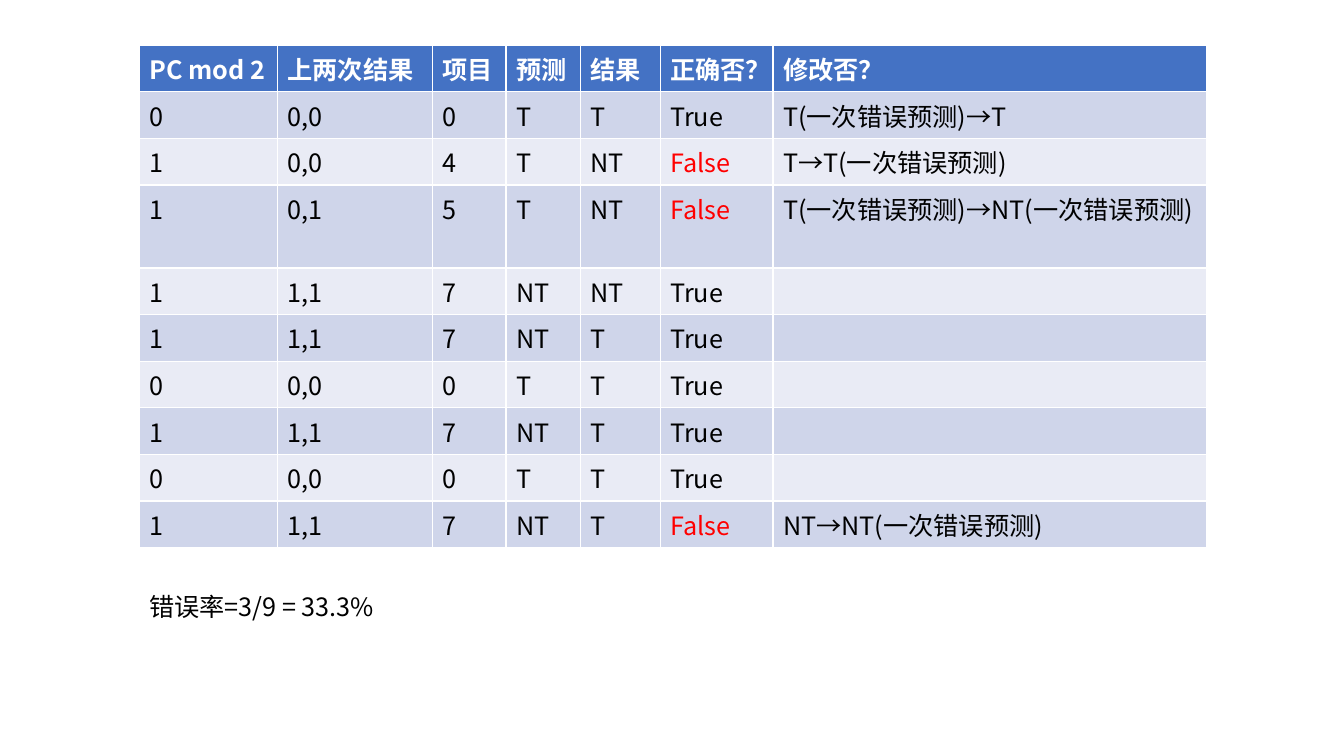
import pptx
import pptx.util
import pptx.dml.color
import pptx.enum.text
import pptx.oxml.ns
import lxml.etree

Cm = pptx.util.Cm
FONT = "Noto Sans CJK SC"
COLOURS = {
    "header": "4472C4",
    "odd row": "CFD5EA",
    "even row": "E9EBF5",
    "header text": "FFFFFF",
    "text": "000000",
    "wrong": "FF0000",
}


def colour(name):
    return pptx.dml.color.RGBColor.from_string(COLOURS[name])


def style_text(para, colour_name, bold=False):
    para.font.name = FONT
    para.font.size = pptx.util.Pt(18)
    para.font.bold = bold
    para.font.color.rgb = colour(colour_name)
    # Chinese characters take their typeface from a:ea
    defaults = para._p.pPr.find(pptx.oxml.ns.qn("a:defRPr"))
    east_asian = lxml.etree.SubElement(defaults, pptx.oxml.ns.qn("a:ea"))
    east_asian.set("typeface", FONT)


deck = pptx.Presentation()
deck.slide_width = Cm(33.87)
deck.slide_height = Cm(19.05)
page = deck.slides.add_slide(deck.slide_layouts[6])

# Prediction table
rows = [
    ["PC mod 2", "上两次结果", "项目", "预测", "结果", "正确否？", "修改否？"],
    ["0", "0,0", "0", "T", "T", "True", "T(一次错误预测)→T"],
    ["1", "0,0", "4", "T", "NT", "False", "T→T(一次错误预测)"],
    ["1", "0,1", "5", "T", "NT", "False", "T(一次错误预测)→NT(一次错误预测)"],
    ["1", "1,1", "7", "NT", "NT", "True", ""],
    ["1", "1,1", "7", "NT", "T", "True", ""],
    ["0", "0,0", "0", "T", "T", "True", ""],
    ["1", "1,1", "7", "NT", "T", "True", ""],
    ["0", "0,0", "0", "T", "T", "True", ""],
    ["1", "1,1", "7", "NT", "T", "False", "NT→NT(一次错误预测)"],
]
widths = [3.48, 3.91, 1.85, 1.88, 2.01, 2.84, 10.92]
row_height = 1.03

table = page.shapes.add_table(
    len(rows), len(widths), Cm(3.51), Cm(1.14),
    Cm(sum(widths)), Cm(row_height * len(rows))).table
for column, width in zip(table.columns, widths):
    column.width = Cm(width)

for r, values in enumerate(rows):
    table.rows[r].height = Cm(row_height)
    is_header = r == 0
    fill = "header" if is_header else "odd row" if r % 2 else "even row"
    for c, value in enumerate(values):
        cell = table.cell(r, c)
        cell.fill.solid()
        cell.fill.fore_color.rgb = colour(fill)
        if not value:
            continue
        cell.text = value
        text_colour = "header text" if is_header else "wrong" if value == "False" else "text"
        style_text(cell.text_frame.paragraphs[0], text_colour, is_header)

# Error rate
box = page.shapes.add_textbox(Cm(3.51), Cm(14.78), Cm(18.95), Cm(1.03))
frame = box.text_frame
frame.word_wrap = True
frame.auto_size = pptx.enum.text.MSO_AUTO_SIZE.SHAPE_TO_FIT_TEXT
frame.text = "错误率=3/9 = 33.3%"
style_text(frame.paragraphs[0], "text")

deck.save("out.pptx")
